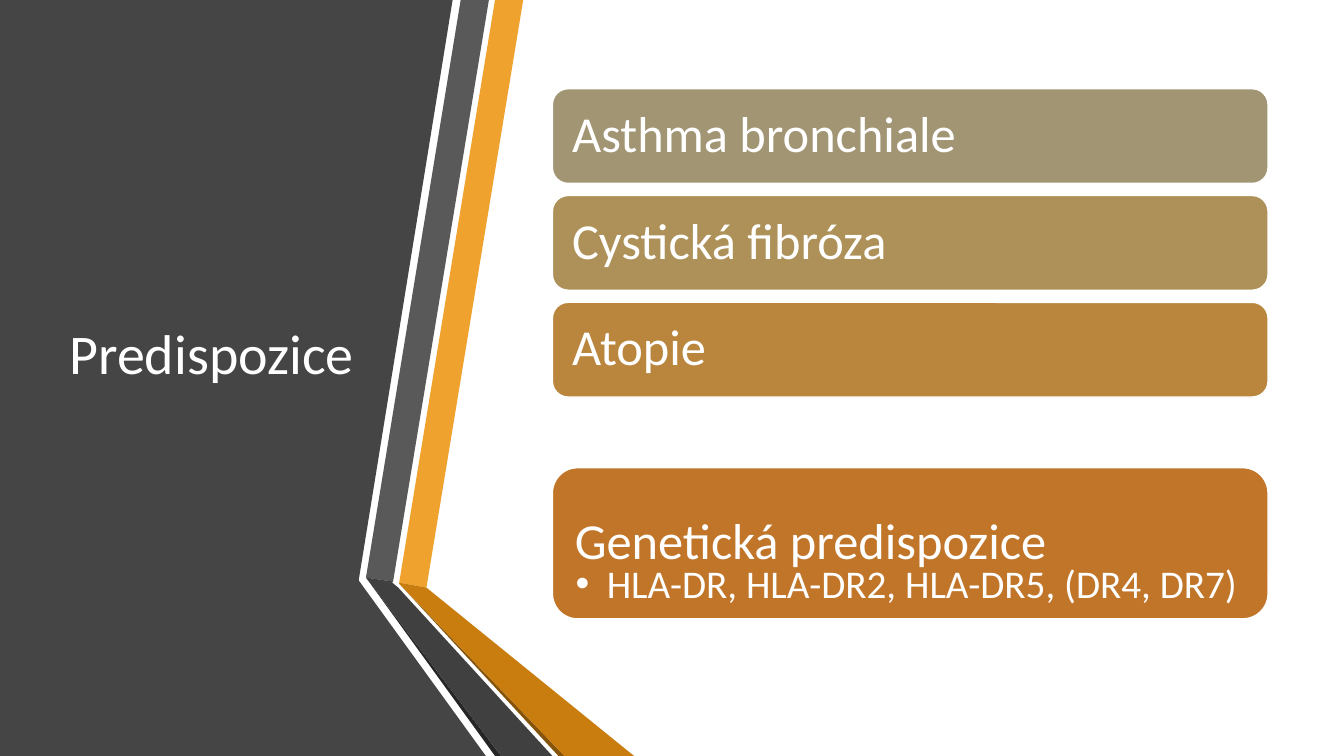
from lxml import etree
from pptx import Presentation
from pptx.dml.color import RGBColor
from pptx.enum.shapes import MSO_SHAPE
from pptx.enum.text import MSO_ANCHOR, PP_ALIGN
from pptx.oxml.ns import qn
from pptx.util import Inches, Pt

ROUNDED = MSO_SHAPE.ROUNDED_RECTANGLE
MIDDLE = MSO_ANCHOR.MIDDLE
TOP = MSO_ANCHOR.TOP
LEFT = PP_ALIGN.LEFT

SLIDE_WIDTH = Inches(13.33)
SLIDE_HEIGHT = Inches(7.5)
FONT = "Calibri"
COLORS = {
    "white": "FFFFFF",
    "panel": "454545",
    "orange": "F0A22E",
    "grey": "595959",
    "black": "262626",
    "brown": "85540A",
    "amber": "C87D0E",
    "charcoal": "404040",
    "khaki": "A19574",
    "sand": "AE9159",
    "ochre": "BA863E",
    "rust": "C17529",
}

# Shares are percentages of the slide's width and height.
RIBBONS = [
    ("panel", [(0, 0), (33.68, 0), (26.7, 76.67), (26.7, 76.8), (36.15, 100), (0, 100)]),
    ("orange", [(29.7, 77.07), (31.73, 77.73), (38.93, 0), (36.83, 0)]),
    ("grey", [(36.38, 0), (34.28, 0), (27.23, 76.4), (29.25, 76.93)]),
    ("black", [(27.23, 76.4), (36.83, 100), (37.28, 100)]),
    ("brown", [(29.7, 77.2), (41.55, 100), (42, 100)]),
    ("amber", [(29.7, 77.2), (42, 100), (47.18, 100), (31.73, 77.73), (29.7, 77.07)]),
    ("charcoal", [(41.1, 100), (29.63, 77.73), (29.18, 77.07), (29.25, 76.93),
                  (27.23, 76.4), (37.28, 100)]),
]
BAR_LEFT, BAR_WIDTH = 41.1, 53.25
BAR_TOP, BAR_PITCH, BAR_HEIGHT = 11.73, 14.13, 12.53
CONDITIONS = [("Asthma bronchiale", "khaki"), ("Cystická fibróza", "sand"), ("Atopie", "ochre")]


def across(share):
    return round(SLIDE_WIDTH * share / 100)


def down(share):
    return round(SLIDE_HEIGHT * share / 100)


def place(left, top, width, height):
    return across(left), down(top), across(width), down(height)


def paint(shape, color):
    shape.shadow.inherit = False
    shape.fill.solid()
    shape.fill.fore_color.rgb = RGBColor.from_string(COLORS[color])


def write(shape, text, size, anchor=MIDDLE, insets=(0.15, 0.15, 0.15, 0.15)):
    frame = shape.text_frame
    frame.word_wrap = True
    frame.vertical_anchor = anchor
    (frame.margin_left, frame.margin_top,
     frame.margin_right, frame.margin_bottom) = map(Inches, insets)
    paragraph = frame.paragraphs[0]
    paragraph.alignment = LEFT
    paragraph.line_spacing = 0.9
    run = paragraph.add_run()
    run.text = text
    run.font.name = FONT
    run.font.size = Pt(size)
    run.font.color.rgb = RGBColor.from_string(COLORS["white"])
    return paragraph


def add_ribbon(slide, color, corners):
    points = [(across(x), down(y)) for x, y in corners]
    builder = slide.shapes.build_freeform(*points[0])
    builder.add_line_segments(points[1:], close=True)
    shape = builder.convert_to_shape()
    paint(shape, color)
    shape.line.fill.background()


def add_bar(slide, text, color, top, height):
    shape = slide.shapes.add_shape(ROUNDED, *place(BAR_LEFT, top, BAR_WIDTH, height))
    paint(shape, color)
    shape.line.color.rgb = RGBColor.from_string(COLORS["white"])
    shape.line.width = Pt(1)
    write(shape, text, 36)


def add_text(slide, box, text, size, anchor, insets):
    return write(slide.shapes.add_textbox(*place(*box)), text, size, anchor, insets)


def add_bullet(paragraph, indent):
    properties = paragraph._p.get_or_add_pPr()
    properties.set("marL", str(Inches(indent)))
    properties.set("indent", str(-Inches(indent)))
    etree.SubElement(properties, qn("a:buFont"), typeface="Arial")
    etree.SubElement(properties, qn("a:buChar"), char="•")


def main():
    presentation = Presentation()
    presentation.slide_width = SLIDE_WIDTH
    presentation.slide_height = SLIDE_HEIGHT
    slide = presentation.slides.add_slide(presentation.slide_layouts[6])

    for color, corners in RIBBONS:
        add_ribbon(slide, color, corners)
    add_text(slide, (4.43, 10, 22.8, 74.4), "Predispozice", 40, MIDDLE, (0.1, 0.05, 0, 0.05))

    for index, (text, color) in enumerate(CONDITIONS):
        add_bar(slide, text, color, BAR_TOP + index * BAR_PITCH, BAR_HEIGHT)
    add_bar(slide, "Genetická predispozice", "rust", 61.87, 20)
    genes = add_text(slide, (BAR_LEFT, 74, BAR_WIDTH, 8.67),
                     "HLA-DR, HLA-DR2, HLA-DR5, (DR4, DR7)", 28, TOP, (0.23, 0.05, 0.28, 0.05))
    add_bullet(genes, 0.31)

    presentation.save("out.pptx")


if __name__ == "__main__":
    main()
